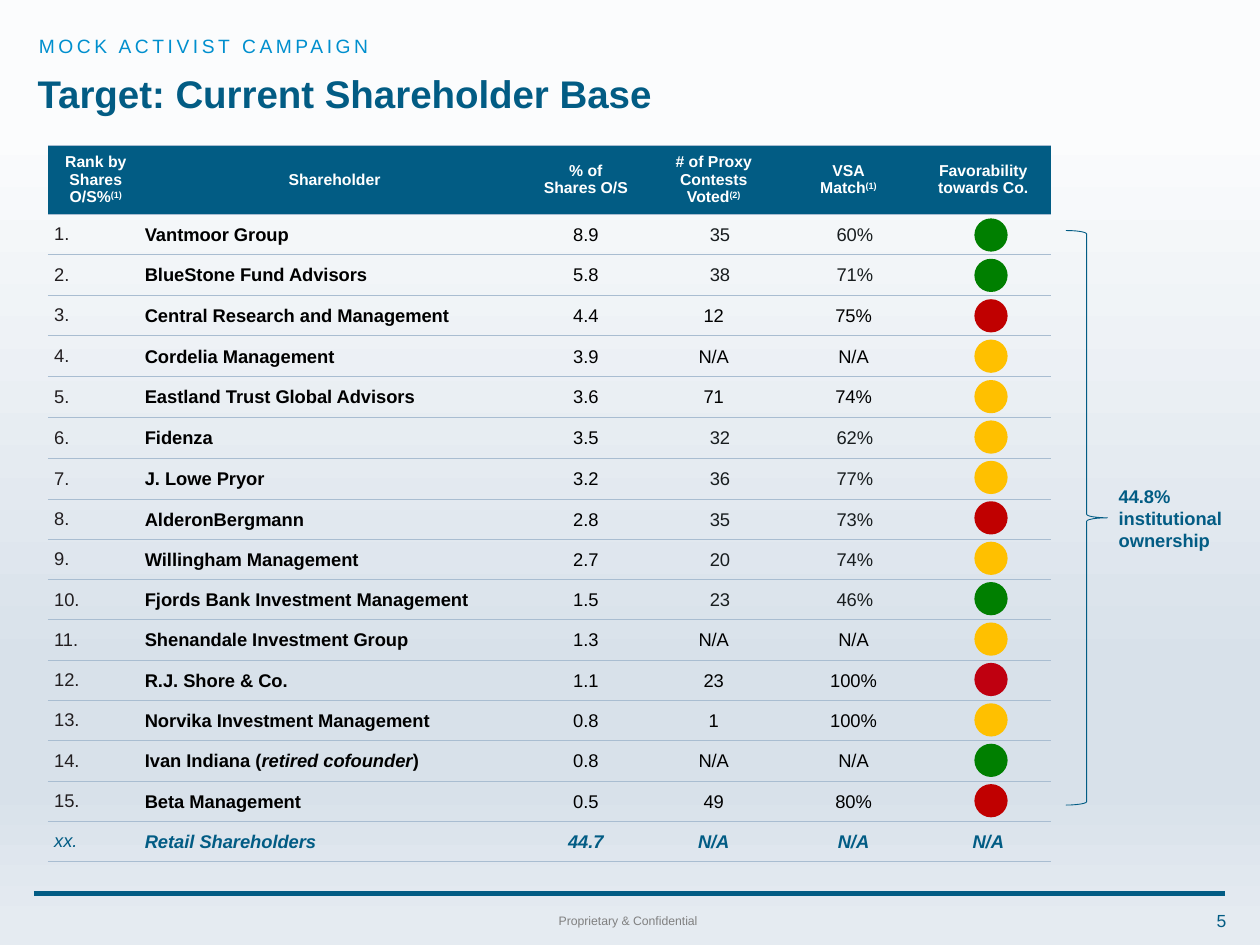
from lxml import etree
from pptx import Presentation
from pptx.dml.color import RGBColor
from pptx.enum.shapes import MSO_CONNECTOR, MSO_SHAPE
from pptx.enum.text import MSO_ANCHOR, PP_ALIGN
from pptx.oxml.ns import qn
from pptx.util import Inches, Pt

LEFT, CENTER, RIGHT = PP_ALIGN.LEFT, PP_ALIGN.CENTER, PP_ALIGN.RIGHT
TOP, MIDDLE = MSO_ANCHOR.TOP, MSO_ANCHOR.MIDDLE
OVAL, BRACE = MSO_SHAPE.OVAL, MSO_SHAPE.RIGHT_BRACE
STRAIGHT = MSO_CONNECTOR.STRAIGHT

THEME = {
    "font": "Arial",
    "navy": "025C84", "sky": "008FCE", "gray": "808080", "white": "FFFFFF",
    "black": "000000", "rank": "221E20", "soft": "181D1F", "rule": "A9BDD1",
    "green": "007F00", "amber": "FFC000", "red": "C00000", "crimson": "BF0010",
    "backdrop": [(13, "FBFCFD"), (71, "D8E1EA"), (83, "D8E1EA"), (98, "E5EBF1")],
    "title": 22, "kicker": 11, "body": 10.5, "number": 10, "header": 9, "footer": 7,
}

KICKER = "MOCK ACTIVIST CAMPAIGN"
TITLE = "Target: Current Shareholder Base"
FOOTER = "Proprietary & Confidential"
PAGE = "5"
OWNERSHIP = "44.8% institutional ownership"

SUPER = {"baseline": 30}
ITALIC = {"italic": True}
HEADERS = [
    [["Rank by"], ["Shares O/S%", ("(1)", SUPER)]],
    [["Shareholder"]],
    [["% of"], ["Shares O/S"]],
    [["# of Proxy Contests Voted", ("(2)", SUPER)]],
    [["VSA"], ["Match", ("(1)", SUPER)]],
    [["Favorability towards Co."]],
]
HOLDERS = [
    (["Vantmoor Group"], "8.9", "35", "60%", "green", "soft"),
    (["BlueStone Fund Advisors"], "5.8", "38", "71%", "green", "soft"),
    (["Central Research and Management"], "4.4", "12", "75%", "red", "black"),
    (["Cordelia Management"], "3.9", "N/A", "N/A", "amber", "black"),
    (["Eastland Trust Global Advisors"], "3.6", "71", "74%", "amber", "black"),
    (["Fidenza"], "3.5", "32", "62%", "amber", "soft"),
    (["J. Lowe Pryor"], "3.2", "36", "77%", "amber", "soft"),
    (["AlderonBergmann"], "2.8", "35", "73%", "red", "soft"),
    (["Willingham Management"], "2.7", "20", "74%", "amber", "soft"),
    (["Fjords Bank Investment Management"], "1.5", "23", "46%", "green", "soft"),
    (["Shenandale Investment Group"], "1.3", "N/A", "N/A", "amber", "black"),
    (["R.J. Shore & Co."], "1.1", "23", "100%", "crimson", "black"),
    (["Norvika Investment Management"], "0.8", "1", "100%", "amber", "black"),
    (["Ivan Indiana (", ("retired cofounder", ITALIC), ")"],
     "0.8", "N/A", "N/A", "green", "black"),
    (["Beta Management"], "0.5", "49", "80%", "red", "black"),
]
RETAIL = ["xx.", "Retail Shareholders", "44.7", "N/A", "N/A", "N/A"]

COLUMNS = [0.76, 3.03, 0.96, 1.07, 1.07, 1.07]
HEADER_HEIGHT, ROW_HEIGHT, TALL_HEIGHT = 0.54, 0.32, 0.33
TALL_RANKS = {4, 6}
DOT_LEFT, DOT_FIRST, DOT_LAST, DOT_SIZE = 7.74, 1.74, 6.23, 0.25
RANK_INSETS = (0.05, 0.01, 0.05, 0.01)


def color(name):
    return RGBColor.from_string(THEME[name])


def write(frame, paragraphs, size="body", ink="black", bold=False, italic=False,
          align=LEFT, spacing=None, tracking=None):
    for index, runs in enumerate(paragraphs):
        paragraph = frame.paragraphs[0] if index == 0 else frame.add_paragraph()
        paragraph.alignment = align
        if spacing:
            paragraph.line_spacing = spacing
        for part in runs:
            words, extra = (part, {}) if isinstance(part, str) else part
            run = paragraph.add_run()
            run.text = words
            run.font.name = THEME["font"]
            run.font.size = Pt(THEME[size])
            run.font.bold = bold
            run.font.italic = extra.get("italic", italic)
            run.font.color.rgb = color(ink)
            properties = run._r.get_or_add_rPr()
            if "baseline" in extra:
                properties.set("baseline", str(extra["baseline"] * 1000))
            if tracking:
                properties.set("spc", str(tracking * 100))


def add_label(slide, box, words, anchor=TOP, top_inset=0.05, **style):
    frame = slide.shapes.add_textbox(*map(Inches, box)).text_frame
    frame.word_wrap = True
    frame.vertical_anchor = anchor
    frame.margin_top = Inches(top_inset)
    write(frame, [[words]], **style)


def paint_backdrop(slide):
    fill = slide.background.fill
    fill.gradient()
    fill.gradient_angle = 270
    stops = slide.element.find(".//" + qn("a:gsLst"))
    for stop in list(stops):
        stops.remove(stop)
    for position, tone in THEME["backdrop"]:
        stop = etree.SubElement(stops, qn("a:gs"), pos=str(position * 1000))
        etree.SubElement(stop, qn("a:srgbClr"), val=tone)


def fill_cell(cell, paragraphs, insets, shade=None, **style):
    cell.vertical_anchor = MIDDLE
    cell.margin_left, cell.margin_top, cell.margin_right, cell.margin_bottom = map(
        Inches, insets)
    if shade:
        cell.fill.solid()
        cell.fill.fore_color.rgb = color(shade)
    else:
        cell.fill.background()
    properties = cell._tc.get_or_add_tcPr()
    for index, side in enumerate(("a:lnT", "a:lnB")):
        border = etree.Element(qn(side), w=str(Pt(0.5)))
        solid = etree.SubElement(border, qn("a:solidFill"))
        etree.SubElement(solid, qn("a:srgbClr"), val=THEME["rule"])
        properties.insert(index, border)
    write(cell.text_frame, paragraphs, **style)


def value_insets(left):
    return (left, 0.01, 0.01, 0)


def add_holders(slide):
    heights = [HEADER_HEIGHT] + [
        TALL_HEIGHT if rank in TALL_RANKS else ROW_HEIGHT
        for rank in range(1, len(HOLDERS) + 2)]
    frame = slide.shapes.add_table(
        len(heights), len(COLUMNS), Inches(0.38), Inches(1.15),
        Inches(sum(COLUMNS)), Inches(sum(heights)))
    table = frame.table
    table.first_row = table.horz_banding = False
    table._tbl.tblPr.find(qn("a:tableStyleId")).text = "{2D5ABB26-0587-4C30-8999-92F81FD0307C}"
    for column, width in zip(table.columns, COLUMNS):
        column.width = Inches(width)
    for row, height in zip(table.rows, heights):
        row.height = Inches(height)

    for column, heading in enumerate(HEADERS):
        fill_cell(table.cell(0, column), heading, (0.05,) * 4, shade="navy",
                  size="header", ink="white", bold=True, align=CENTER)
    for rank, (name, share, contests, match, _, ink) in enumerate(HOLDERS, 1):
        contest_left, match_left = (0.11, 0.11) if ink == "soft" else (0.01, 0.09)
        fill_cell(table.cell(rank, 0), [[f"{rank}."]], RANK_INSETS, ink="rank")
        fill_cell(table.cell(rank, 1), [name], value_insets(0.01), bold=True)
        fill_cell(table.cell(rank, 2), [[share]], value_insets(0.01), align=CENTER)
        fill_cell(table.cell(rank, 3), [[contests]], value_insets(contest_left),
                  ink=ink, align=CENTER)
        fill_cell(table.cell(rank, 4), [[match]], value_insets(match_left),
                  ink=ink, align=CENTER)
        fill_cell(table.cell(rank, 5), [], value_insets(0.01))
    for column, words in enumerate(RETAIL):
        insets = RANK_INSETS if column == 0 else value_insets(0.09 if column > 3 else 0.01)
        fill_cell(table.cell(len(HOLDERS) + 1, column), [[words]], insets, ink="navy",
                  bold=column > 0, italic=True, align=CENTER if column > 1 else LEFT)


def add_outline(slide, kind, box, line, width):
    shape = slide.shapes.add_shape(kind, *map(Inches, box))
    shape.shadow.inherit = False
    shape.fill.background()
    shape.line.color.rgb = color(line)
    shape.line.width = Pt(width)
    return shape


def add_dots(slide):
    pitch = (DOT_LAST - DOT_FIRST) / (len(HOLDERS) - 1)
    for index, holder in enumerate(HOLDERS):
        favor = holder[4]
        dot = add_outline(slide, OVAL, (DOT_LEFT, DOT_FIRST + index * pitch,
                                        DOT_SIZE, DOT_SIZE), favor, 1)
        dot.fill.solid()
        dot.fill.fore_color.rgb = color(favor)


def main():
    deck = Presentation()
    deck.slide_width, deck.slide_height = Inches(10), Inches(7.5)
    slide = deck.slides.add_slide(deck.slide_layouts[6])
    paint_backdrop(slide)
    add_label(slide, (0.25, 7.2, 9.47, 0.22), FOOTER, size="footer", ink="gray",
              align=CENTER)
    rule = slide.shapes.add_connector(
        STRAIGHT, Inches(0.27), Inches(7.09), Inches(9.72), Inches(7.09))
    rule.line.color.rgb = color("navy")
    rule.line.width = Pt(3)
    etree.SubElement(rule._element.spPr, qn("a:effectLst"))
    add_holders(slide)
    add_label(slide, (9.34, 7.17, 0.49, 0.27), PAGE, anchor=MIDDLE, size="number",
              ink="navy", align=RIGHT)
    add_label(slide, (0.2, 0.38, 9, 0.77), TITLE, anchor=MIDDLE, size="title",
              ink="navy", bold=True, spacing=0.9)
    add_label(slide, (0.21, 0.21, 9.65, 0.23), KICKER, top_inset=0.06, size="kicker",
              ink="sky", tracking=2)
    add_dots(slide)
    add_outline(slide, BRACE, (8.46, 1.83, 0.33, 4.56), "navy", 0.5)
    add_label(slide, (8.78, 3.8, 1.05, 0.63), OWNERSHIP, ink="navy", bold=True)
    deck.save("out.pptx")


if __name__ == "__main__":
    main()
